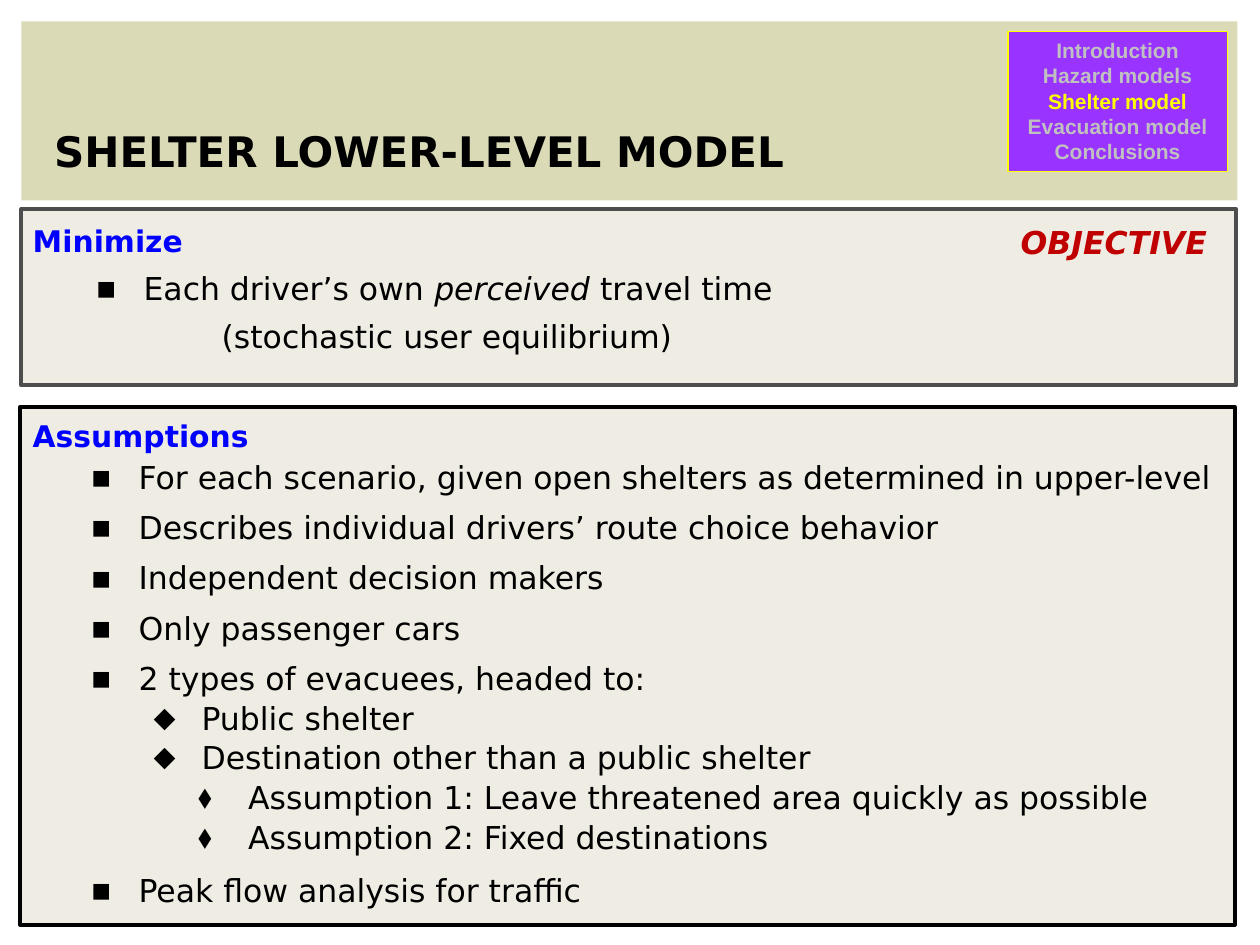
import pptx
import pptx.util
import pptx.dml.color
import pptx.enum.shapes
import pptx.enum.text
import pptx.oxml
import pptx.oxml.ns

Inches, Pt = pptx.util.Inches, pptx.util.Pt
ALIGN = pptx.enum.text.PP_ALIGN
ANCHOR = pptx.enum.text.MSO_ANCHOR
FONT = "DejaVu Sans"
BLUE, CREAM = "0000FF", "EFEDE3"

# Content
TITLE = "SHELTER LOWER-LEVEL MODEL"
STEPS = ["Introduction", "Hazard models", "Shelter model",
         "Evacuation model", "Conclusions"]
ACTIVE = "Shelter model"
GOAL = [("Each driver’s own ", False), ("perceived", True),
        (" travel time", False)]
NOTE = "(stochastic user equilibrium)"
# (level, space before, text)
ITEMS = [
    (1, 0, "For each scenario, given open shelters as determined in upper-level"),
    (1, 6, "Describes individual drivers’ route choice behavior"),
    (1, 6, "Independent decision makers"),
    (1, 6, "Only passenger cars"),
    (1, 6, "2 types of evacuees, headed to:"),
    (2, 0, "Public shelter"),
    (2, 0, "Destination other than a public shelter"),
    (3, 0, "Assumption 1: Leave threatened area quickly as possible"),
    (3, 0, "Assumption 2: Fixed destinations"),
    (1, 8, "Peak flow analysis for traffic"),
]
# level: (left margin, first-line indent, bullet)
LEVELS = {1: (0.88, -0.38, "▪"), 2: (1.38, -0.38, "⬥"), 3: (1.75, -0.4, "⬧")}


def paint(code):
    return pptx.dml.color.RGBColor.from_string(code)


def write(frame, text, size=18, color="000000", bold=False, italic=False,
          font=FONT, align=ALIGN.LEFT, level=0, left=0, first=0, mark=None,
          before=0, lines=1.0):
    """Add one paragraph; text is a string or a list of (text, italic)."""
    para = frame.paragraphs[0]
    if para.runs:
        para = frame.add_paragraph()
    props = para._p.get_or_add_pPr()
    props.set("marL", str(Inches(left)))
    props.set("indent", str(Inches(first)))
    tags = [("buFont", "typeface", FONT), ("buChar", "char", mark)]
    if not mark:
        tags = [("buNone", None, None)]
    for tag, key, value in tags:
        node = pptx.oxml.parse_xml(
            f"<a:{tag} {pptx.oxml.ns.nsdecls('a')}/>")
        if key:
            node.set(key, value)
        props.append(node)
    para.level, para.alignment = level, align
    para.space_before, para.line_spacing = Pt(before), lines
    parts = [(text, italic)] if isinstance(text, str) else text
    for words, slant in parts:
        run = para.add_run()
        run.text = words
        face = run.font
        face.name, face.size = font, Pt(size)
        face.bold, face.italic = bold, slant
        face.color.rgb = paint(color)


def place(shape, box):
    shape.left, shape.top, shape.width, shape.height = map(Inches, box)


def setup(shape, anchor=ANCHOR.TOP, wrap=True, inset=0):
    frame = shape.text_frame
    frame.auto_size = pptx.enum.text.MSO_AUTO_SIZE.NONE
    frame.word_wrap, frame.vertical_anchor = wrap, anchor
    frame.margin_left = frame.margin_right = Inches(inset)
    frame.margin_top = frame.margin_bottom = Inches(inset / 2)
    return frame


def panel(shapes, box, fill, line=None, width=2.25):
    shape = shapes.add_shape(pptx.enum.shapes.MSO_SHAPE.RECTANGLE,
                             *map(Inches, box))
    shape.shadow.inherit = False
    shape.fill.solid()
    shape.fill.fore_color.rgb = paint(fill)
    if line:
        shape.line.color.rgb = paint(line)
        shape.line.width = Pt(width)
    else:
        shape.line.fill.background()
    return shape


def main():
    deck = pptx.Presentation()
    deck.slide_width, deck.slide_height = Inches(10), Inches(7.5)
    slide = deck.slides.add_slide(deck.slide_layouts[3])
    shapes = slide.shapes
    title, goal, items = slide.placeholders

    # Panels, then the placeholders in front of them
    panel(shapes, (0.17, 0.17, 9.65, 1.42), "DADAB6")
    panel(shapes, (0.16, 3.23, 9.64, 4.11), CREAM, "000000")
    panel(shapes, (0.17, 1.66, 9.64, 1.4), CREAM, "4D4D4D")
    for holder in (title, goal, items):
        shapes._spTree.append(holder._element)

    # Title
    place(title, (0.43, 0.29, 7.4, 1.11))
    write(setup(title, ANCHOR.BOTTOM), TITLE, size=24, bold=True, lines=1.04)

    # Objective
    place(goal, (0.26, 1.75, 9.5, 1.2))
    frame = setup(goal)
    left, first, mark = LEVELS[1]
    write(frame, "Minimize", size=17, color=BLUE, bold=True, lines=1.05)
    write(frame, GOAL, level=1, left=left, first=first, mark=mark, before=6)
    write(frame, NOTE, level=1, left=1.5, before=6)
    label = shapes.add_textbox(*map(Inches, (7.95, 1.72, 1.78, 0.4)))
    write(setup(label, wrap=False, inset=0.1), "OBJECTIVE", color="C00000",
          bold=True, italic=True, align=ALIGN.CENTER)

    # Assumptions
    head = shapes.add_textbox(*map(Inches, (0.26, 3.3, 9.5, 0.3)))
    write(setup(head), "Assumptions", size=17, color=BLUE, bold=True,
          lines=1.05)
    place(items, (0.22, 3.62, 9.56, 3.65))
    frame = setup(items)
    for level, before, text in ITEMS:
        left, first, mark = LEVELS[level]
        write(frame, text, level=level, left=left, first=first, mark=mark,
              before=before, lines=1.05)

    # Progress box
    steps = panel(shapes, (8, 0.25, 1.74, 1.11), "9933FF", "FFFF00", 0.75)
    frame = setup(steps, inset=0.1)
    for step in STEPS:
        write(frame, step, size=12, font="Arial", bold=True,
              color="FFFF00" if step == ACTIVE else "C0C0C0",
              align=ALIGN.CENTER)

    deck.save("out.pptx")


if __name__ == "__main__":
    main()
